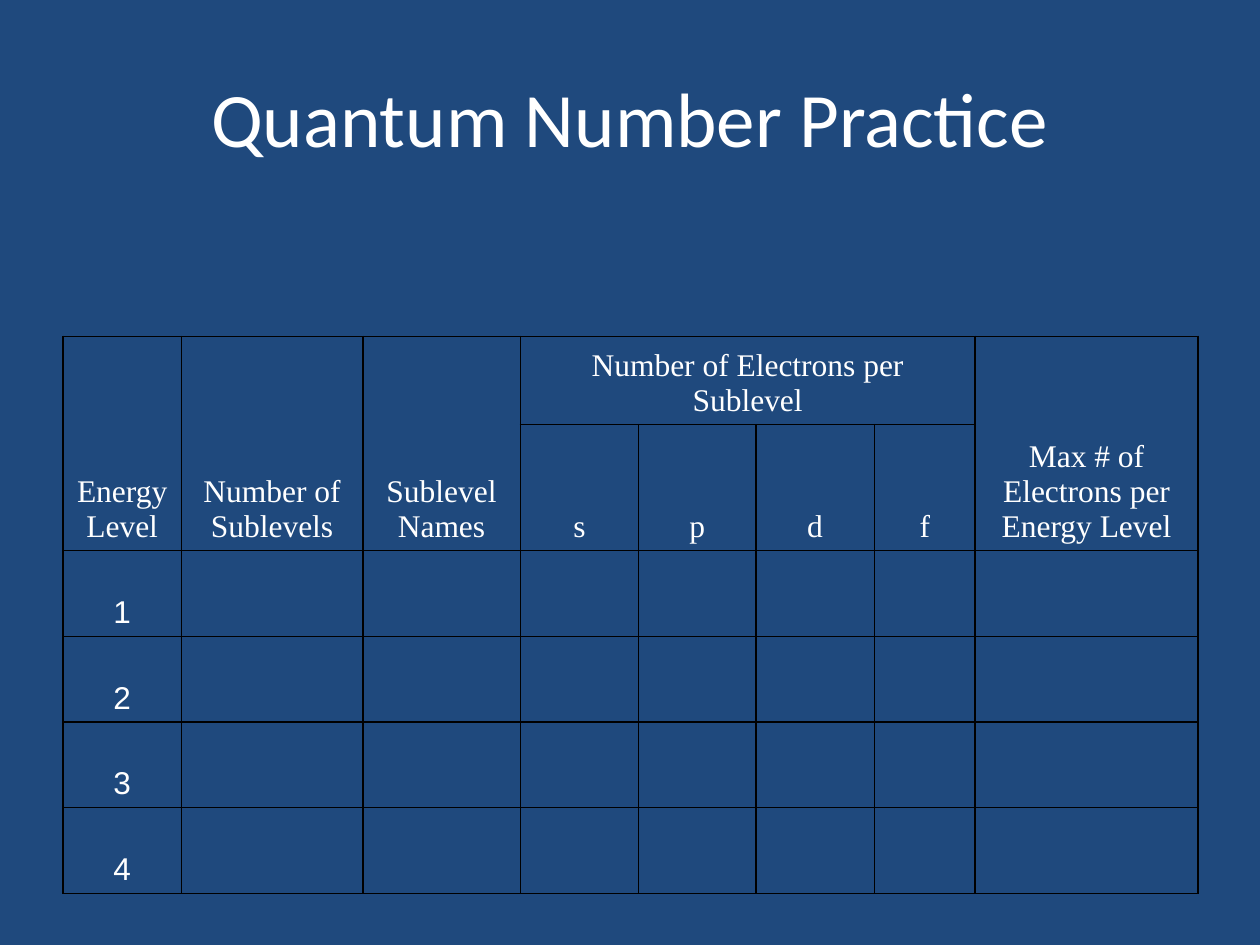
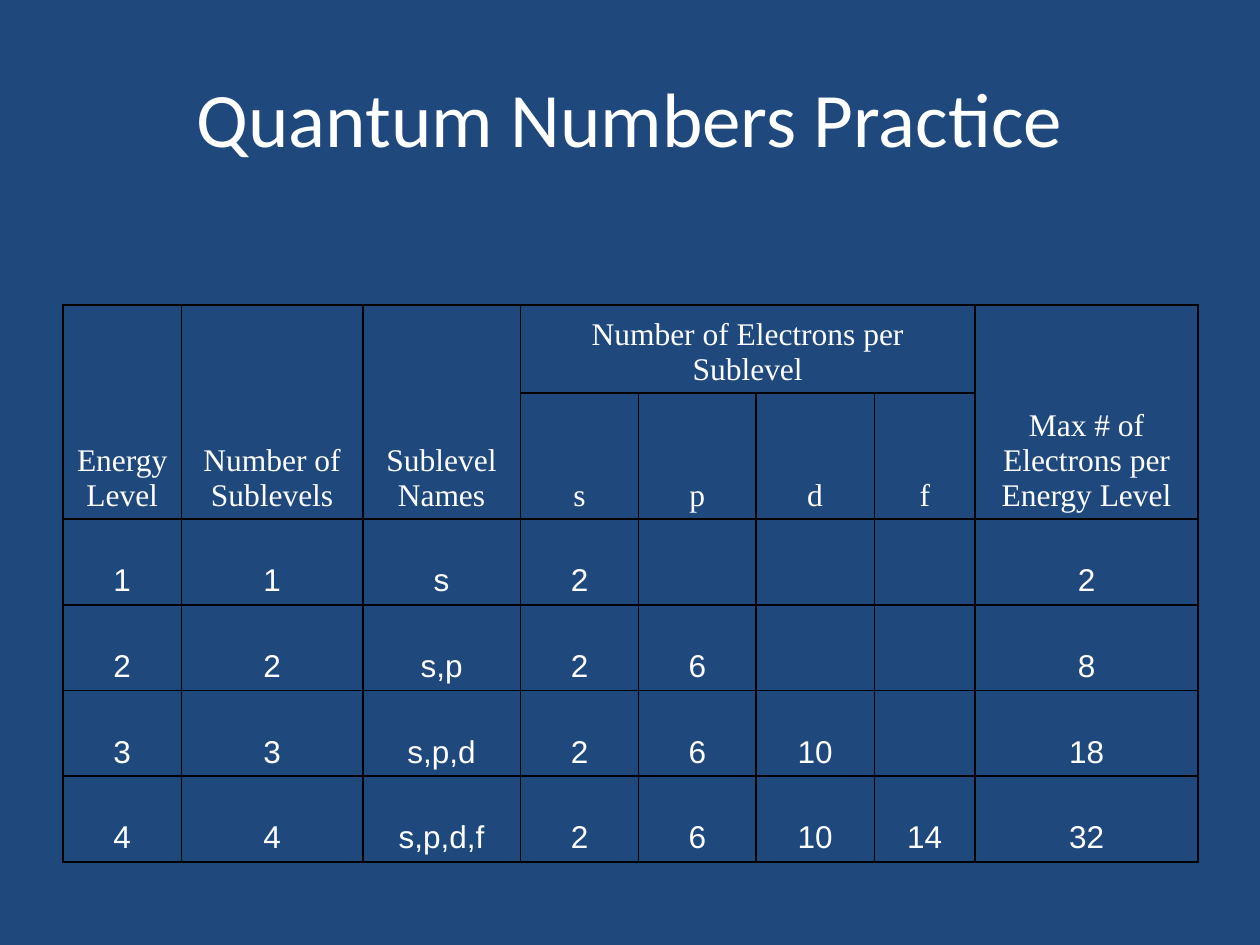
"""Build two quantum number practice slides: a blank worksheet and its answers."""
from lxml import etree
from pptx import Presentation
from pptx import util as u
from pptx.dml import color
from pptx.enum import text
from pptx.oxml import ns

NAVY, WHITE, BLACK = "1F497D", "FFFFFF", "000000"
TITLE_FONT, HEADING_FONT, VALUE_FONT = "Calibri", "Times New Roman", "Arial"
COLUMN_WIDTHS = [0.94, 1.44, 1.25, 0.94, 0.93, 0.94, 0.8, 1.77]
ROW_HEIGHTS = [0.65, 0.93] + [0.68] * 4
HEADINGS = {
    (0, 0): "Energy Level",
    (0, 1): "Number of Sublevels",
    (0, 2): "Sublevel Names",
    (0, 3): "Number of Electrons per Sublevel",
    (0, 7): "Max # of Electrons per Energy Level",
}
CAPACITIES = {"s": 2, "p": 6, "d": 10, "f": 14}
LEVELS = range(1, 5)


def rgb(hex_value):
    """Turn a hex string into a colour."""
    return color.RGBColor.from_string(hex_value)


def apply_format(target, values):
    """Set each named attribute on the target."""
    for name, value in values.items():
        setattr(target, name, value)


def write_line(frame, wording, font_name, size):
    """Write one centred white line of text."""
    line = frame.paragraphs[0]
    line.alignment = text.PP_ALIGN.CENTER
    run = line.add_run()
    run.text = wording
    apply_format(run.font, {"name": font_name, "size": u.Pt(size)})
    run.font.color.rgb = rgb(WHITE)


def add_title(slide, wording):
    """Add the slide title."""
    box = slide.shapes.add_textbox(
        u.Inches(0.5), u.Inches(0.3), u.Inches(9), u.Inches(1.25))
    apply_format(box.text_frame, {
        "word_wrap": True, "vertical_anchor": text.MSO_ANCHOR.MIDDLE})
    write_line(box.text_frame, wording, TITLE_FONT, 44)


def outline_cell(cell):
    """Draw thin black borders around an unfilled cell."""
    properties = cell._tc.get_or_add_tcPr()
    for side in ("a:lnL", "a:lnR", "a:lnT", "a:lnB"):
        border = etree.SubElement(properties, ns.qn(side), w=str(u.Pt(1)))
        fill = etree.SubElement(border, ns.qn("a:solidFill"))
        etree.SubElement(fill, ns.qn("a:srgbClr"), val=BLACK)
    cell.fill.background()
    cell.vertical_anchor = text.MSO_ANCHOR.BOTTOM


def add_grid(slide, top):
    """Add the outlined table with its merged headings."""
    table = slide.shapes.add_table(
        len(ROW_HEIGHTS), len(COLUMN_WIDTHS), u.Inches(0.5), u.Inches(top),
        u.Inches(sum(COLUMN_WIDTHS)), u.Inches(sum(ROW_HEIGHTS))).table
    apply_format(table, {"first_row": False, "horz_banding": False})
    for column, width in zip(table.columns, COLUMN_WIDTHS):
        column.width = u.Inches(width)
    for row, height in zip(table.rows, ROW_HEIGHTS):
        row.height = u.Inches(height)
    for cell in table.iter_cells():
        outline_cell(cell)
    for column in (0, 1, 2, 7):
        table.cell(0, column).merge(table.cell(1, column))
    table.cell(0, 3).merge(table.cell(0, 6))
    sublevels = {(1, 3 + i): name for i, name in enumerate(CAPACITIES)}
    fill_cells(table, HEADINGS | sublevels, HEADING_FONT)
    return table


def fill_cells(table, entries, font_name):
    """Write entries keyed by row and column."""
    for (row, column), wording in entries.items():
        write_line(table.cell(row, column).text_frame, wording, font_name, 18)


def level_answers(level):
    """Work out the answers for one energy level, by column."""
    names = list(CAPACITIES)[:level]
    electrons = [CAPACITIES[name] for name in names]
    answers = {1: level, 2: ",".join(names), 7: sum(electrons)}
    return answers | {3 + i: count for i, count in enumerate(electrons)}


def add_practice_slide(deck, title, table_top, answered):
    """Add a practice slide, with or without the answers."""
    slide = deck.slides.add_slide(deck.slide_layouts[6])
    slide.background.fill.solid()
    slide.background.fill.fore_color.rgb = rgb(NAVY)
    add_title(slide, title)
    table = add_grid(slide, table_top)
    for level in LEVELS:
        values = {0: level} | (level_answers(level) if answered else {})
        entries = {(level + 1, column): str(value)
                   for column, value in values.items()}
        fill_cells(table, entries, VALUE_FONT)


def main():
    """Build and save the deck."""
    deck = Presentation()
    apply_format(deck, {
        "slide_width": u.Inches(10), "slide_height": u.Inches(7.5)})
    add_practice_slide(deck, "Quantum Number Practice", 2.67, False)
    add_practice_slide(deck, "Quantum Numbers Practice", 2.42, True)
    deck.save("out.pptx")


if __name__ == "__main__":
    main()
